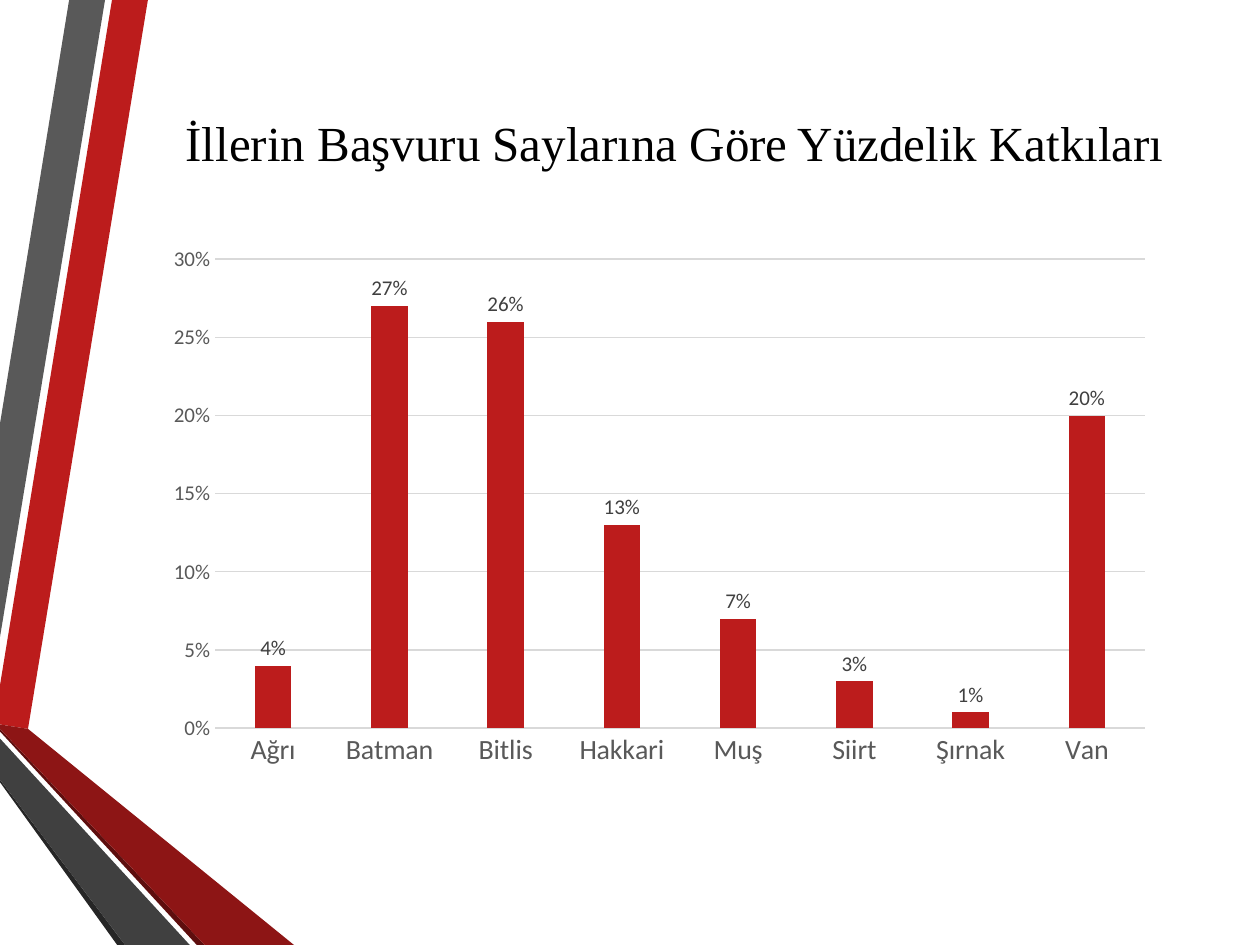
from dataclasses import dataclass

from lxml import etree
from pptx import Presentation
from pptx.chart.data import CategoryChartData
from pptx.dml.color import RGBColor
from pptx.enum.chart import XL_CHART_TYPE, XL_LABEL_POSITION, XL_TICK_MARK
from pptx.enum.text import MSO_ANCHOR, PP_ALIGN
from pptx.oxml.ns import qn
from pptx.util import Pt

COLUMNS = XL_CHART_TYPE.COLUMN_CLUSTERED
OUTSIDE_END = XL_LABEL_POSITION.OUTSIDE_END
NO_TICKS = XL_TICK_MARK.NONE
MIDDLE = MSO_ANCHOR.MIDDLE
CENTER = PP_ALIGN.CENTER
TITLE_ONLY = 5
WIDTH, HEIGHT = 720, 540


@dataclass(frozen=True)
class Theme:
    title_font: str = "Times New Roman"
    chart_font: str = "Calibri"
    title_size: int = 28
    category_size: int = 16
    label_size: int = 12
    black: str = "000000"
    red: str = "BC1C1C"
    dark_red: str = "8D1515"
    deep_red: str = "5E0E0E"
    gray: str = "595959"
    dark_gray: str = "404040"
    deep_gray: str = "262626"
    grid: str = "D9D9D9"


def set_values(target, values):
    for name, value in values.items():
        setattr(target, name, value)


class SlideBuilder:
    def __init__(self, slide, theme):
        self.slide = slide
        self.theme = theme

    def format_font(self, font, name, size, color):
        set_values(font, {"name": name, "size": Pt(size), "bold": False})
        font.color.rgb = RGBColor.from_string(color)

    def format_line(self, line, color):
        line.width = Pt(0.75)
        line.color.rgb = RGBColor.from_string(color)

    def place(self, shape, left, top, width, height):
        set_values(shape, {"left": Pt(left), "top": Pt(top),
                           "width": Pt(width), "height": Pt(height)})

    def add_band(self, color, points):
        corners = [(Pt(x), Pt(y)) for x, y in points]
        builder = self.slide.shapes.build_freeform(*corners[0])
        builder.add_line_segments(corners[1:], close=True)
        shape = builder.convert_to_shape()
        shape.shadow.inherit = False
        shape.fill.solid()
        shape.fill.fore_color.rgb = RGBColor.from_string(color)
        shape.line.fill.background()

    def add_title(self, text, box):
        title = self.slide.shapes.title
        self.place(title, *box)
        title.text_frame.vertical_anchor = MIDDLE
        paragraph = title.text_frame.paragraphs[0]
        paragraph.alignment = CENTER
        run = paragraph.add_run()
        run.text = text
        self.format_font(run.font, self.theme.title_font,
                         self.theme.title_size, self.theme.black)

    def add_column_chart(self, shares, box, plot_layout):
        theme = self.theme
        data = CategoryChartData(number_format="0%")
        data.categories = list(shares)
        data.add_series("Series 1", list(shares.values()))
        frame = self.slide.shapes.add_chart(COLUMNS, *map(Pt, box), data)
        chart = frame.chart
        set_values(chart, {"has_legend": False, "has_title": False})
        self.format_font(chart.font, theme.chart_font, 10, theme.black)

        # Axes
        value_axis, category_axis = chart.value_axis, chart.category_axis
        for axis, size in ((value_axis, theme.label_size),
                           (category_axis, theme.category_size)):
            set_values(axis, {"major_tick_mark": NO_TICKS,
                              "minor_tick_mark": NO_TICKS})
            self.format_font(axis.tick_labels.font, theme.chart_font,
                             size, theme.gray)
        set_values(value_axis, {"minimum_scale": 0, "maximum_scale": 0.3,
                                "major_unit": 0.05})
        set_values(value_axis.tick_labels, {"number_format": "0%",
                                            "number_format_is_linked": False})
        value_axis.format.line.fill.background()
        self.format_line(value_axis.major_gridlines.format.line, theme.grid)
        self.format_line(category_axis.format.line, theme.grid)

        # Columns and their labels
        plot = chart.plots[0]
        set_values(plot, {"gap_width": 219, "overlap": -27,
                          "vary_by_categories": False,
                          "has_data_labels": True})
        fill = plot.series[0].format.fill
        fill.solid()
        fill.fore_color.rgb = RGBColor.from_string(theme.red)
        set_values(plot.data_labels, {"show_value": True,
                                      "position": OUTSIDE_END,
                                      "number_format": "0%",
                                      "number_format_is_linked": False})
        self.format_font(plot.data_labels.font, theme.chart_font,
                         theme.label_size, theme.dark_gray)
        self.set_plot_layout(chart, plot_layout)

    def set_plot_layout(self, chart, fractions):
        plot_area = chart.element.find(".//" + qn("c:plotArea"))
        layout = plot_area.find(qn("c:layout"))
        if layout is None:
            layout = etree.Element(qn("c:layout"))
            plot_area.insert(0, layout)
        manual = etree.SubElement(layout, qn("c:manualLayout"))
        settings = {"layoutTarget": "inner", "xMode": "edge", "yMode": "edge",
                    **dict(zip("xywh", fractions))}
        for name, value in settings.items():
            etree.SubElement(manual, qn("c:" + name)).set("val", str(value))


def main():
    presentation = Presentation()
    set_values(presentation, {"slide_width": Pt(WIDTH),
                              "slide_height": Pt(HEIGHT)})
    slide = presentation.slides.add_slide(
        presentation.slide_layouts[TITLE_ONLY])
    theme = Theme()
    builder = SlideBuilder(slide, theme)

    # Folded ribbons along the left edge
    ribbons = [
        (theme.red, [(0, 391.5), (0, 414), (16, 416.5), (84.5, 0), (64, 0)]),
        (theme.gray, [(60, 0), (39.5, 0), (0, 242), (0, 364)]),
        (theme.deep_gray, [(0, 445.5), (0, 447), (67, HEIGHT), (71.5, HEIGHT)]),
        (theme.deep_red, [(0, 416.5), (0, 418), (112.5, HEIGHT),
                          (117, HEIGHT)]),
        (theme.dark_red, [(0, 416.5), (117, HEIGHT), (168, HEIGHT),
                          (16, 416.5), (0, 414)]),
        (theme.dark_gray, [(0, 445.5), (71.5, HEIGHT), (108.5, HEIGHT),
                           (0, 422)]),
    ]
    for color, points in ribbons:
        builder.add_band(color, points)

    # Title
    builder.add_title("İllerin Başvuru Saylarına Göre Yüzdelik Katkıları",
                      (82, 21, 607, 120))

    # Share of applications by province
    shares = {"Ağrı": 0.04, "Batman": 0.27, "Bitlis": 0.26, "Hakkari": 0.13,
              "Muş": 0.07, "Siirt": 0.03, "Şırnak": 0.01, "Van": 0.2}
    builder.add_column_chart(shares, (82, 141, 584, 312.5),
                             (0.07, 0.02, 0.91, 0.86))

    presentation.save("out.pptx")


if __name__ == "__main__":
    main()
